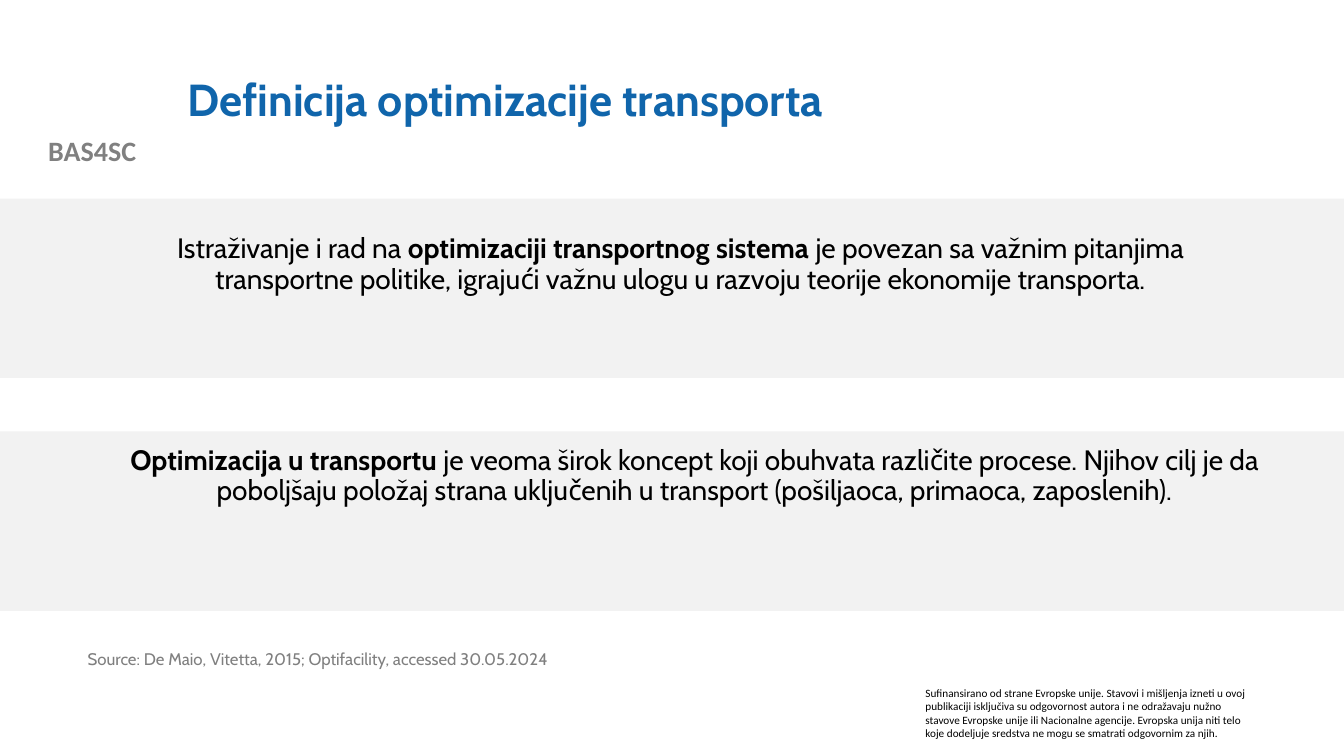
from dataclasses import dataclass

from pptx import Presentation
from pptx.dml.color import RGBColor
from pptx.enum.shapes import MSO_SHAPE
from pptx.enum.text import MSO_ANCHOR, PP_ALIGN
from pptx.util import Inches, Pt


@dataclass(frozen=True)
class Theme:
    """Colours, fonts and type sizes of the slide."""
    band: RGBColor = RGBColor(0xF2, 0xF2, 0xF2)
    blue: RGBColor = RGBColor(0x10, 0x65, 0xAB)
    black: RGBColor = RGBColor(0, 0, 0)
    project_grey: RGBColor = RGBColor(0x80, 0x80, 0x80)
    source_grey: RGBColor = RGBColor(0x7F, 0x7F, 0x7F)
    main_font: str = "Cabin"
    label_font: str = "Calibri"
    title_size: Pt = Pt(32)
    body_size: Pt = Pt(20)
    source_size: Pt = Pt(12)
    notice_size: Pt = Pt(8)


THEME = Theme()
SLIDE_WIDTH = 13.33
FUNDING_NOTICE = (
    "Sufinansirano od strane Evropske unije. Stavovi i mišljenja izneti u ovoj "
    "publikaciji isključiva su odgovornost autora i ne odražavaju nužno stavove "
    "Evropske unije ili Nacionalne agencije. Evropska unija niti telo koje "
    "dodeljuje sredstva ne mogu se smatrati odgovornim za njih."
)
RESEARCH = [
    ("Istraživanje i rad na ", False),
    ("optimizaciji transportnog sistema ", True),
    ("je povezan sa važnim pitanjima transportne politike, igrajući važnu ulogu "
     "u razvoju teorije ekonomije transporta.", False),
]
CONCEPT = [
    ("Optimizacija u transportu ", True),
    ("je veoma širok koncept koji obuhvata različite procese. Njihov cilj je da "
     "poboljšaju položaj strana uključenih u transport (pošiljaoca, primaoca, "
     "zaposlenih).", False),
]


def set_format(target, values):
    """Set every attribute in values on target."""
    for name, value in values.items():
        setattr(target, name, value)


def add_band(slide, top):
    """Add a full-width grey band."""
    band = slide.shapes.add_shape(
        MSO_SHAPE.RECTANGLE, 0, Inches(top), Inches(SLIDE_WIDTH), Inches(1.78))
    band.shadow.inherit = False
    band.fill.solid()
    band.fill.fore_color.rgb = THEME.band
    band.line.fill.background()


def add_text(slide, place, parts, size, color, font=THEME.main_font,
             align=PP_ALIGN.LEFT, spacing=0.9, anchor=MSO_ANCHOR.TOP):
    """Add one paragraph made of (text, bold) parts."""
    box = slide.shapes.add_textbox(*map(Inches, place))
    set_format(box.text_frame, {"word_wrap": True, "vertical_anchor": anchor})
    paragraph = box.text_frame.paragraphs[0]
    set_format(paragraph, {"alignment": align, "line_spacing": spacing})
    for text, bold in parts:
        run = paragraph.add_run()
        run.text = text
        set_format(run.font, {"name": font, "size": size, "bold": bold})
        run.font.color.rgb = color


def main():
    """Build and save the slide."""
    deck = Presentation()
    set_format(deck, {"slide_width": Inches(SLIDE_WIDTH), "slide_height": Inches(7.5)})
    slide = deck.slides.add_slide(deck.slide_layouts[6])

    add_text(slide, (0, 1.28, 1.83, 0.44), [("BAS4SC", True)], THEME.body_size,
             THEME.project_grey, THEME.label_font, PP_ALIGN.CENTER, 1.0)
    add_text(slide, (9.08, 6.76, 3.42, 0.64), [(FUNDING_NOTICE, False)],
             THEME.notice_size, THEME.black, THEME.label_font, spacing=1.0)
    for top in (4.28, 1.97):
        add_band(slide, top)
    add_text(slide, (1.76, 0.4, 10.66, 1.22),
             [("Definicija optimizacije transporta", True)],
             THEME.title_size, THEME.blue, anchor=MSO_ANCHOR.MIDDLE)
    for place, statement in (((1, 2.28, 11.5, 1.69), RESEARCH),
                             ((0.93, 4.38, 11.92, 1.69), CONCEPT)):
        add_text(slide, place, statement, THEME.body_size, THEME.black,
                 align=PP_ALIGN.CENTER)
    add_text(slide, (0.77, 6.41, 5.6, 0.52),
             [("Source: De Maio, Vitetta, 2015; Optifacility, accessed 30.05.2024", False)],
             THEME.source_size, THEME.source_grey)
    deck.save("out.pptx")


if __name__ == "__main__":
    main()
